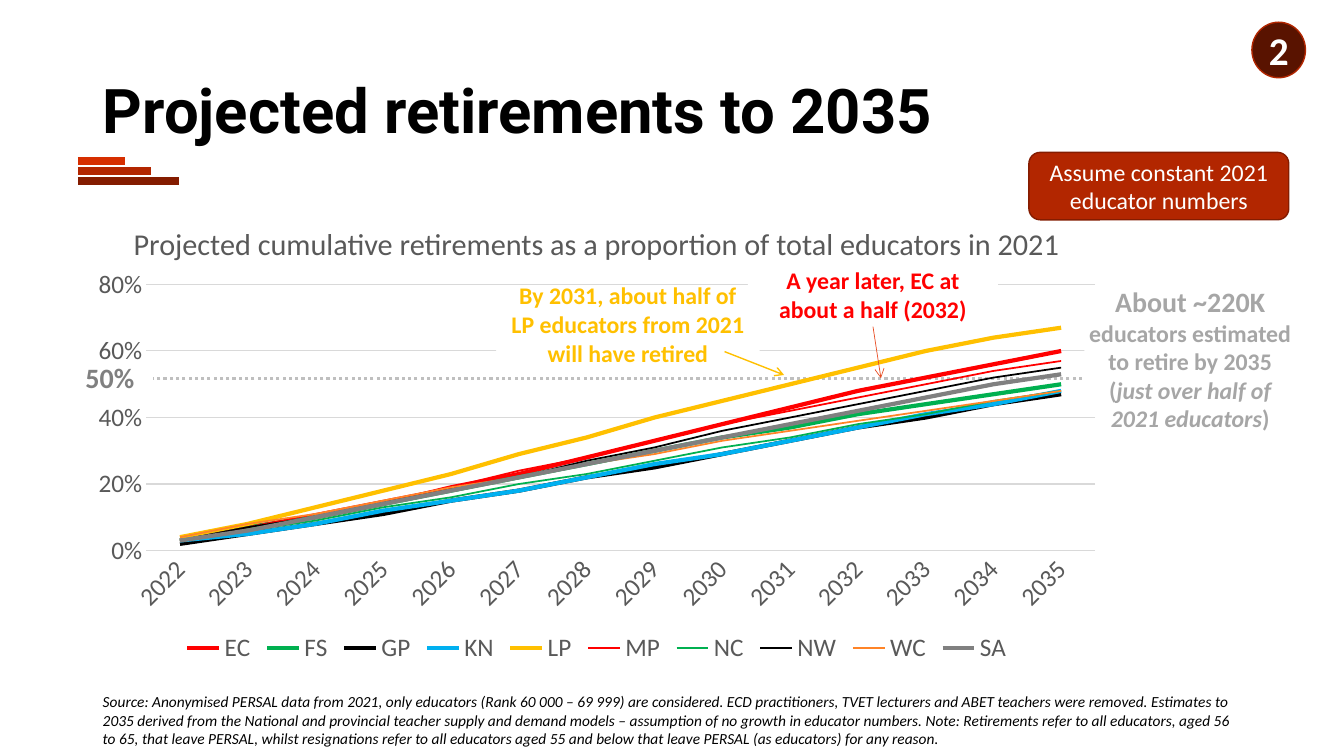
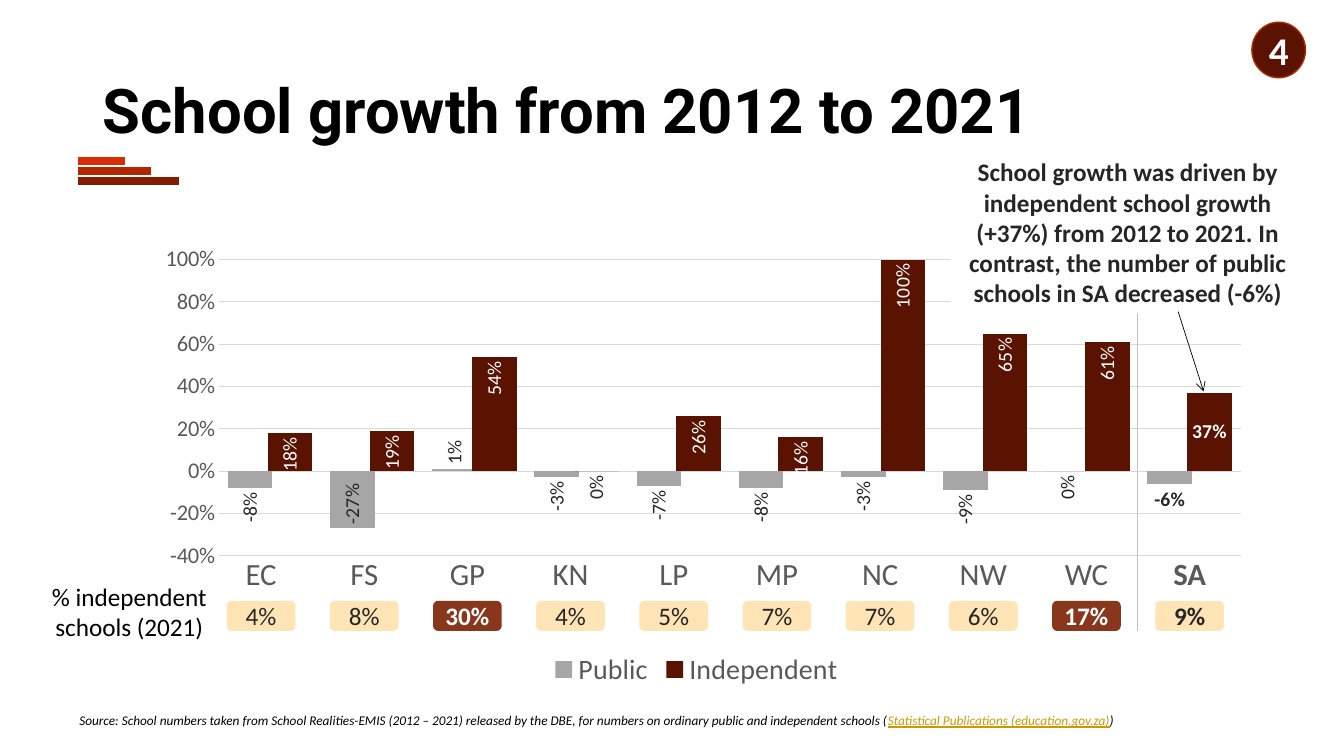
from dataclasses import dataclass
from lxml.etree import SubElement
from pptx import Presentation
from pptx.chart.data import CategoryChartData
from pptx.dml.color import RGBColor
from pptx.enum.chart import XL_CHART_TYPE, XL_LABEL_POSITION, XL_LEGEND_POSITION, XL_TICK_MARK
from pptx.enum.dml import MSO_LINE
from pptx.enum.shapes import MSO_CONNECTOR, MSO_SHAPE
from pptx.enum.text import MSO_ANCHOR, PP_ALIGN
from pptx.oxml import parse_xml
from pptx.oxml.ns import nsdecls, qn
from pptx.util import Cm, Pt


@dataclass(frozen=True)
class Theme:
    body_font: str = "Calibri"
    title_font: str = "Roboto"
    black: str = "000000"
    white: str = "FFFFFF"
    ink: str = "262626"
    axis: str = "595959"
    grid: str = "D9D9D9"
    rule: str = "BFBFBF"
    muted: str = "A6A6A6"
    gray: str = "808080"
    red: str = "FF0000"
    green: str = "00B050"
    blue: str = "00B0F0"
    gold: str = "FFC000"
    orange: str = "FF8427"
    ember: str = "E84C22"
    brick: str = "B22600"
    rust: str = "841C00"
    flame: str = "D62E00"
    maroon: str = "591300"
    pill: str = "FFE5B5"
    highlight: str = "88371D"
    link: str = "CC9900"
    title_size: float = 44
    badge_size: float = 28
    legend_size: float = 20
    heading_size: float = 21.6
    table_size: float = 22
    big_size: float = 20
    body_size: float = 18
    callout_size: float = 17
    axis_size: float = 16
    label_size: float = 14
    source_size: float = 11
    small_source_size: float = 9.5


THEME = Theme()

RETIREMENT_TITLE = "Projected retirements to 2035"
RETIREMENT_HEADING = "Projected cumulative retirements as a proportion of total educators in 2021"
YEARS = [str(year) for year in range(2022, 2036)]
RETIREMENTS = [
    ("EC", THEME.red, 3, (0.03, 0.07, 0.1, 0.14, 0.19, 0.23, 0.28, 0.33, 0.38, 0.43, 0.48, 0.52, 0.56, 0.6)),
    ("FS", THEME.green, 3, (0.03, 0.07, 0.1, 0.14, 0.18, 0.22, 0.26, 0.3, 0.34, 0.37, 0.41, 0.44, 0.47, 0.5)),
    ("GP", THEME.black, 3, (0.02, 0.05, 0.08, 0.11, 0.15, 0.18, 0.22, 0.25, 0.29, 0.33, 0.37, 0.4, 0.44, 0.47)),
    ("KN", THEME.blue, 3, (0.03, 0.05, 0.08, 0.12, 0.15, 0.18, 0.22, 0.26, 0.29, 0.33, 0.37, 0.41, 0.44, 0.48)),
    ("LP", THEME.gold, 3, (0.04, 0.08, 0.13, 0.18, 0.23, 0.29, 0.34, 0.4, 0.45, 0.5, 0.55, 0.6, 0.64, 0.67)),
    ("MP", THEME.red, 1.25, (0.03, 0.07, 0.11, 0.15, 0.19, 0.24, 0.28, 0.33, 0.38, 0.42, 0.46, 0.5, 0.54, 0.57)),
    ("NC", THEME.green, 1.25, (0.03, 0.06, 0.09, 0.13, 0.16, 0.2, 0.23, 0.27, 0.31, 0.34, 0.38, 0.41, 0.45, 0.48)),
    ("NW", THEME.black, 1.25, (0.03, 0.07, 0.1, 0.14, 0.18, 0.22, 0.27, 0.31, 0.36, 0.4, 0.44, 0.48, 0.52, 0.55)),
    ("WC", THEME.orange, 1.25, (0.04, 0.08, 0.11, 0.15, 0.19, 0.22, 0.26, 0.29, 0.33, 0.36, 0.39, 0.42, 0.45, 0.48)),
    ("SA", THEME.gray, 3, (0.03, 0.06, 0.1, 0.14, 0.18, 0.22, 0.26, 0.3, 0.34, 0.38, 0.42, 0.46, 0.5, 0.53)),
]
RETIREMENT_TOTAL = [
    [("About ~220K", {"size": THEME.big_size})],
    [("educators estimated to retire by 2035", {})],
    [("(", {}), ("just over half of 2021 educators", {"italic": True}), (")", {})],
]
RETIREMENT_SOURCE = (
    "Source: Anonymised PERSAL data from 2021, only educators (Rank 60 000 – 69 999) are considered. "
    "ECD practitioners, TVET lecturers and ABET teachers were removed. Estimates to 2035 derived from "
    "the National and provincial teacher supply and demand models – assumption of no growth in educator "
    "numbers. Note: Retirements refer to all educators, aged 56 to 65, that leave PERSAL, whilst "
    "resignations refer to all educators aged 55 and below that leave PERSAL (as educators) for any reason."
)

GROWTH_TITLE = "School growth from 2012 to 2021"
PROVINCES = ["EC", "FS", "GP", "KN", "LP", "MP", "NC", "NW", "WC", "SA"]
PUBLIC_GROWTH = (-0.08, -0.27, 0.01, -0.03, -0.07, -0.08, -0.03, -0.09, 0, -0.06)
INDEPENDENT_GROWTH = (0.18, 0.19, 0.54, 0, 0.26, 0.16, 1, 0.65, 0.61, 0.37)
INDEPENDENT_SHARE = ["4%", "8%", "30%", "4%", "5%", "7%", "7%", "6%", "17%", "9%"]
HIGH_SHARE = {"GP", "WC"}
GROWTH_CALLOUT = (
    "School growth was driven by independent school growth (+37%) from 2012 to 2021. "
    "In contrast, the number of public schools in SA decreased (-6%)"
)
GROWTH_SOURCE = [[
    ("Source: School numbers taken from School Realities-EMIS (2012 – 2021) released by the DBE, "
     "for numbers on ordinary public and independent schools (", {"italic": True}),
    ("Statistical Publications (education.gov.za)", {"color": THEME.link, "underline": True}),
    (")", {}),
]]


def rgb(color):
    return RGBColor.from_string(color)


def style_font(font, size, color, bold=False, italic=False, underline=False, name=THEME.body_font):
    font.name, font.size, font.color.rgb = name, Pt(size), rgb(color)
    font.bold, font.italic, font.underline = bold, italic, underline


def write(frame, content, size, color, align=PP_ALIGN.CENTER, anchor=MSO_ANCHOR.MIDDLE, **style):
    frame.word_wrap = True
    frame.vertical_anchor = anchor
    paragraphs = [[(content, {})]] if isinstance(content, str) else content
    for index, runs in enumerate(paragraphs):
        paragraph = frame.add_paragraph() if index else frame.paragraphs[0]
        paragraph.alignment = align
        for text, changes in runs:
            run = paragraph.add_run()
            run.text = text
            style_font(run.font, **{"size": size, "color": color, **style, **changes})


def add_text(slide, box, content, size, color, **style):
    shape = slide.shapes.add_textbox(*map(Cm, box))
    write(shape.text_frame, content, size, color, **style)
    return shape


def add_box(slide, kind, box, fill, content, size, color, outline=None, **style):
    shape = slide.shapes.add_shape(kind, *map(Cm, box))
    shape.shadow.inherit = False
    shape.fill.solid()
    shape.fill.fore_color.rgb = rgb(fill)
    if outline:
        shape.line.color.rgb = rgb(outline)
        shape.line.width = Pt(1)
    else:
        shape.line.fill.background()
    write(shape.text_frame, content, size, color, **style)
    return shape


def add_line(slide, start, end, color, width, dash=None, arrow=False):
    line = slide.shapes.add_connector(MSO_CONNECTOR.STRAIGHT, *map(Cm, start + end))
    line.line.color.rgb = rgb(color)
    line.line.width = Pt(width)
    if dash:
        line.line.dash_style = dash
    properties = line.element.xpath("./p:spPr")[0]
    if arrow:
        SubElement(properties.find(qn("a:ln")), qn("a:tailEnd"), type="arrow")
    SubElement(properties, qn("a:effectLst"))
    return line


def remove_insets(frame, sides=("left", "right", "top", "bottom")):
    for side in sides:
        setattr(frame, f"margin_{side}", 0)


def prepare_layout(layout, slide):
    title = layout.placeholders[0]
    title.left, title.top, title.width, title.height = map(Cm, (2.34, 1.02, 29.21, 3.68))
    bars = [(3.15, THEME.flame), (3.81, THEME.brick), (4.5, THEME.rust)]
    for index, (right, color) in enumerate(bars):
        height = 4.06 + 0.25 * index
        bar = add_line(slide, (1.96, height), (right, height), color, 5.5)
        bar.element.xpath(".//p:cNvPr")[0].set("id", str(20 + index))
        layout.shapes.element.append(bar.element)


def start_slide(slide, title, number):
    write(slide.shapes.title.text_frame, title, THEME.title_size, THEME.black,
          align=PP_ALIGN.LEFT, bold=True, name=THEME.title_font)
    slide.shapes.title.text_frame.paragraphs[0].line_spacing = 0.9
    badge = add_box(slide, MSO_SHAPE.OVAL, (31.55, 0.56, 1.35, 1.4), THEME.maroon, number,
                    THEME.badge_size, THEME.white, outline=THEME.brick, bold=True)
    remove_insets(badge.text_frame, ("left", "right"))


def rotate_text(chart, place, degrees):
    for body in chart.element.xpath(f"{place}/c:txPr/a:bodyPr"):
        body.set("rot", str(degrees * 60000))
        body.set("vert", "horz")


def add_percent_chart(slide, kind, box, categories, series, limits, axis_size, legend_size):
    data = CategoryChartData(number_format="0%")
    data.categories = categories
    for name, values in series:
        data.add_series(name, values)
    chart = slide.shapes.add_chart(kind, *map(Cm, box), data).chart
    chart.has_title = False
    chart.has_legend = True
    chart.legend.position = XL_LEGEND_POSITION.BOTTOM
    chart.legend.include_in_layout = False
    style_font(chart.font, THEME.label_size, THEME.black)
    style_font(chart.legend.font, legend_size, THEME.axis)
    for axis in (chart.category_axis, chart.value_axis):
        axis.major_tick_mark = axis.minor_tick_mark = XL_TICK_MARK.NONE
        style_font(axis.tick_labels.font, axis_size, THEME.axis)
    values = chart.value_axis
    values.minimum_scale, values.maximum_scale = limits
    values.major_unit = 0.2
    values.tick_labels.number_format = "0%"
    values.tick_labels.number_format_is_linked = False
    values.format.line.fill.background()
    for line in (values.major_gridlines.format.line, chart.category_axis.format.line):
        line.color.rgb = rgb(THEME.grid)
        line.width = Pt(0.75)
    chart.plots[0].vary_by_categories = False
    return chart


def build_retirements(slide):
    start_slide(slide, RETIREMENT_TITLE, "2")
    rounded = MSO_SHAPE.ROUNDED_RECTANGLE
    add_box(slide, rounded, (25.93, 3.84, 6.55, 1.7), THEME.brick, "Assume constant 2021 educator numbers",
            THEME.callout_size, THEME.white, outline=THEME.rust)
    add_line(slide, (27.74, 9.53), (3.86, 9.53), THEME.rule, 2.25, dash=MSO_LINE.ROUND_DOT)
    chart = add_percent_chart(slide, XL_CHART_TYPE.LINE, (1.96, 6.58, 26.16, 10.26), YEARS,
                              [(name, values) for name, _, _, values in RETIREMENTS],
                              (0, 0.8), THEME.body_size, THEME.body_size)
    rotate_text(chart, ".//c:catAx", -45)
    for series, (_, color, width, _) in zip(chart.series, RETIREMENTS):
        series.smooth = False
        series.format.line.color.rgb = rgb(color)
        series.format.line.width = Pt(width)
    total = add_box(slide, rounded, (27.33, 7.95, 5.33, 2.18), THEME.white, RETIREMENT_TOTAL,
                    THEME.callout_size, THEME.muted, bold=True)
    remove_insets(total.text_frame)
    add_text(slide, (1.65, 8.92, 2.24, 1.17), "50%", THEME.big_size, THEME.gray, bold=True)
    callouts = [
        ((12.5, 7.24, 6.65, 1.85), "By 2031, about half of LP educators from 2021 will have retired", THEME.gold),
        ((18.85, 6.58, 6.3, 1.68), "A year later, EC at about a half (2032)", THEME.red),
    ]
    for box, text, color in callouts:
        add_box(slide, rounded, box, THEME.white, text, THEME.callout_size, color, bold=True)
    add_line(slide, (18.26, 8.86), (19.76, 9.45), THEME.gold, 1, arrow=True)
    add_line(slide, (22, 8.23), (22.2, 9.53), THEME.ember, 0.5, arrow=True)
    add_text(slide, (2.74, 5.41, 24.59, 1.45), RETIREMENT_HEADING, THEME.heading_size, THEME.axis)
    add_text(slide, (2.34, 17.32, 29.21, 1.45), RETIREMENT_SOURCE, THEME.source_size, THEME.black,
             align=PP_ALIGN.LEFT, anchor=MSO_ANCHOR.TOP, italic=True)


def add_growth_chart(slide):
    chart = add_percent_chart(slide, XL_CHART_TYPE.COLUMN_CLUSTERED, (3.56, 5.97, 27.99, 11.48), PROVINCES,
                              [("Public", PUBLIC_GROWTH), ("Independent", INDEPENDENT_GROWTH)],
                              (-0.4, 1), THEME.axis_size, THEME.legend_size)
    chart.category_axis.visible = False
    chart.plots[0].gap_width, chart.plots[0].overlap = 40, 11
    inside, outside, center = (XL_LABEL_POSITION.INSIDE_END, XL_LABEL_POSITION.OUTSIDE_END,
                               XL_LABEL_POSITION.CENTER)
    styles = [
        (THEME.muted, THEME.ink, outside, [(1, inside, THEME.ink), (8, inside, THEME.ink), (9, outside, THEME.ink)]),
        (THEME.maroon, THEME.white, inside, [(3, inside, THEME.ink), (9, center, THEME.white)]),
    ]
    for series, (fill, color, position, exceptions) in zip(chart.series, styles):
        series.invert_if_negative = False
        series.format.fill.solid()
        series.format.fill.fore_color.rgb = rgb(fill)
        labels = series.data_labels
        labels.show_value = True
        labels.number_format, labels.number_format_is_linked = "0%", False
        labels.position = position
        style_font(labels.font, THEME.label_size, color)
        for index, point_position, point_color in exceptions:
            label = series.points[index].data_label
            style_font(label.font, THEME.label_size, point_color, bold=PROVINCES[index] == "SA")
            label.position = point_position
    rotate_text(chart, ".//c:dLbls", -90)
    rotate_text(chart, ".//c:dLbl", -90)
    rotate_text(chart, ".//c:dLbl[c:idx/@val='9']", 0)
    area = chart.element.xpath(".//c:plotArea")[0]
    for layout in area.findall(qn("c:layout")):
        area.remove(layout)
    frame = "".join(f'<c:{tag} val="{value}"/>' for tag, value in (
        ("layoutTarget", "inner"), ("xMode", "edge"), ("yMode", "edge"),
        ("x", 0.07), ("y", 0.05), ("w", 0.92), ("h", 0.65)))
    area.insert(0, parse_xml(f'<c:layout {nsdecls("c")}><c:manualLayout>{frame}</c:manualLayout></c:layout>'))


def build_growth(slide):
    start_slide(slide, GROWTH_TITLE, "4")
    add_growth_chart(slide)
    left, pitch, pill_width = 5.28, 2.6, 1.73
    holder = slide.shapes.add_table(1, len(PROVINCES), Cm(left), Cm(13.84), Cm(pitch * len(PROVINCES)), Cm(1.12))
    holder.element.xpath(".//a:tableStyleId")[0].text = "{2D5ABB26-0587-4C30-8999-92F81FD0307C}"
    holder.table.first_row = holder.table.horz_banding = False
    for index, (province, share) in enumerate(zip(PROVINCES, INDEPENDENT_SHARE)):
        national, high = province == "SA", province in HIGH_SHARE
        cell = holder.table.cell(0, index)
        cell.fill.background()
        remove_insets(cell)
        write(cell.text_frame, province, THEME.table_size, THEME.axis, bold=national)
        cell.vertical_anchor = MSO_ANCHOR.BOTTOM
        pill_left = left + pitch * index + (pitch - pill_width) / 2
        pill = add_box(slide, MSO_SHAPE.ROUNDED_RECTANGLE, (pill_left, 15.14, pill_width, 0.76),
                       THEME.highlight if high else THEME.pill, share, THEME.body_size,
                       THEME.white if high else THEME.ink, bold=high or national)
        remove_insets(pill.text_frame)
    caption = add_text(slide, (1.24, 14.61, 4.04, 1.6), "% independent schools (2021)", THEME.body_size, THEME.black)
    remove_insets(caption.text_frame, ("left", "right"))
    add_line(slide, (28.65, 5.97), (28.65, 15.9), THEME.rule, 0.5)
    add_box(slide, MSO_SHAPE.RECTANGLE, (23.95, 3.81, 8.94, 4.09), THEME.white, GROWTH_CALLOUT,
            THEME.body_size, THEME.ink, bold=True)
    add_line(slide, (29.69, 7.85), (30.33, 9.86), THEME.black, 0.5, arrow=True)
    add_text(slide, (1.75, 17.83, 30.33, 1.07), GROWTH_SOURCE, THEME.small_source_size, THEME.black,
             align=PP_ALIGN.LEFT, anchor=MSO_ANCHOR.TOP, italic=True)


def main():
    presentation = Presentation()
    presentation.slide_width, presentation.slide_height = Cm(33.87), Cm(19.05)
    layout = presentation.slide_layouts[5]
    slides = [presentation.slides.add_slide(layout) for _ in range(2)]
    prepare_layout(layout, slides[0])
    for build, slide in zip((build_retirements, build_growth), slides):
        build(slide)
    presentation.save("out.pptx")


if __name__ == "__main__":
    main()
